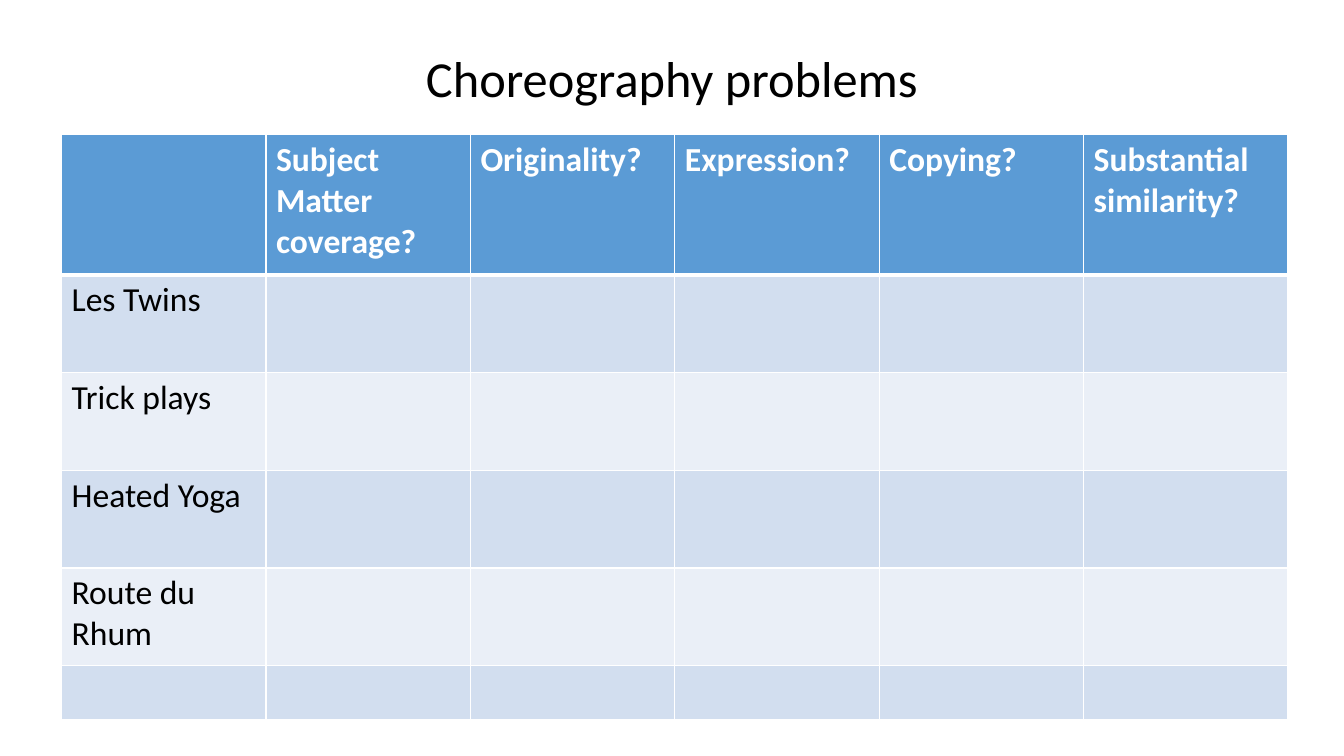
import pptx
import pptx.oxml
import pptx.util
from dataclasses import dataclass
from pptx.dml.color import RGBColor
from pptx.enum.text import MSO_ANCHOR, PP_ALIGN
from pptx.oxml.ns import nsdecls

Pt = pptx.util.Pt


@dataclass(frozen=True)
class Theme:
    face: str = "Calibri"
    ink: str = "000000"
    white: str = "FFFFFF"
    head: str = "5B9BD5"
    bands: tuple = ("D2DEEF", "EAEFF7")
    title: float = 36
    body: float = 24


THEME = Theme()
TESTS = ["Subject Matter coverage?", "Originality?", "Expression?",
         "Copying?", "Substantial similarity?"]
CASES = ["Les Twins", "Trick plays", "Heated Yoga", "Route du Rhum", ""]
COLUMN = 146.04
HEIGHTS = [100.4] + [69.8] * 4 + [38.8]


def style(para, size, color, bold=False):
    font = para.font
    font.name = THEME.face
    font.size = Pt(size)
    font.bold = bold
    font.color.rgb = RGBColor.from_string(color)


def add_title(slide, text):
    title = slide.shapes.title
    title.left, title.top = Pt(66), Pt(28.8)
    title.width, title.height = Pt(828), Pt(59)
    frame = title.text_frame
    frame.text = text
    frame.vertical_anchor = MSO_ANCHOR.MIDDLE
    para = frame.paragraphs[0]
    para.alignment = PP_ALIGN.CENTER
    para.line_spacing = 0.9
    style(para, THEME.title, THEME.ink)


def fill_cell(cell, text, fill, color, bold):
    cell.fill.solid()
    cell.fill.fore_color.rgb = RGBColor.from_string(fill)
    if text:
        cell.text = text
        style(cell.text_frame.paragraphs[0], THEME.body, color, bold)


def rule_below(cell, width):
    line = pptx.oxml.parse_xml(
        f'<a:lnB {nsdecls("a")} w="{Pt(width)}"><a:solidFill>'
        f'<a:srgbClr val="{THEME.white}"/></a:solidFill></a:lnB>')
    cell._tc.get_or_add_tcPr().insert(0, line)


def add_grid(slide, left, top):
    rows = [[""] + TESTS] + [[case] + [""] * len(TESTS) for case in CASES]
    count = len(rows[0])
    frame = slide.shapes.add_table(len(rows), count, Pt(left), Pt(top),
                                   Pt(COLUMN * count), Pt(sum(HEIGHTS)))
    table = frame.table
    for column in table.columns:
        column.width = Pt(COLUMN)
    for r, texts in enumerate(rows):
        table.rows[r].height = Pt(HEIGHTS[r])
        header = r == 0
        fill = THEME.head if header else THEME.bands[(r - 1) % 2]
        color = THEME.white if header else THEME.ink
        for c, text in enumerate(texts):
            cell = table.cell(r, c)
            fill_cell(cell, text, fill, color, header)
            if header:
                rule_below(cell, 3)


def main():
    deck = pptx.Presentation()
    deck.slide_width, deck.slide_height = Pt(960), Pt(540)
    slide = deck.slides.add_slide(deck.slide_layouts[5])
    add_title(slide, "Choreography problems")
    add_grid(slide, 44, 96)
    deck.save("out.pptx")


if __name__ == "__main__":
    main()
